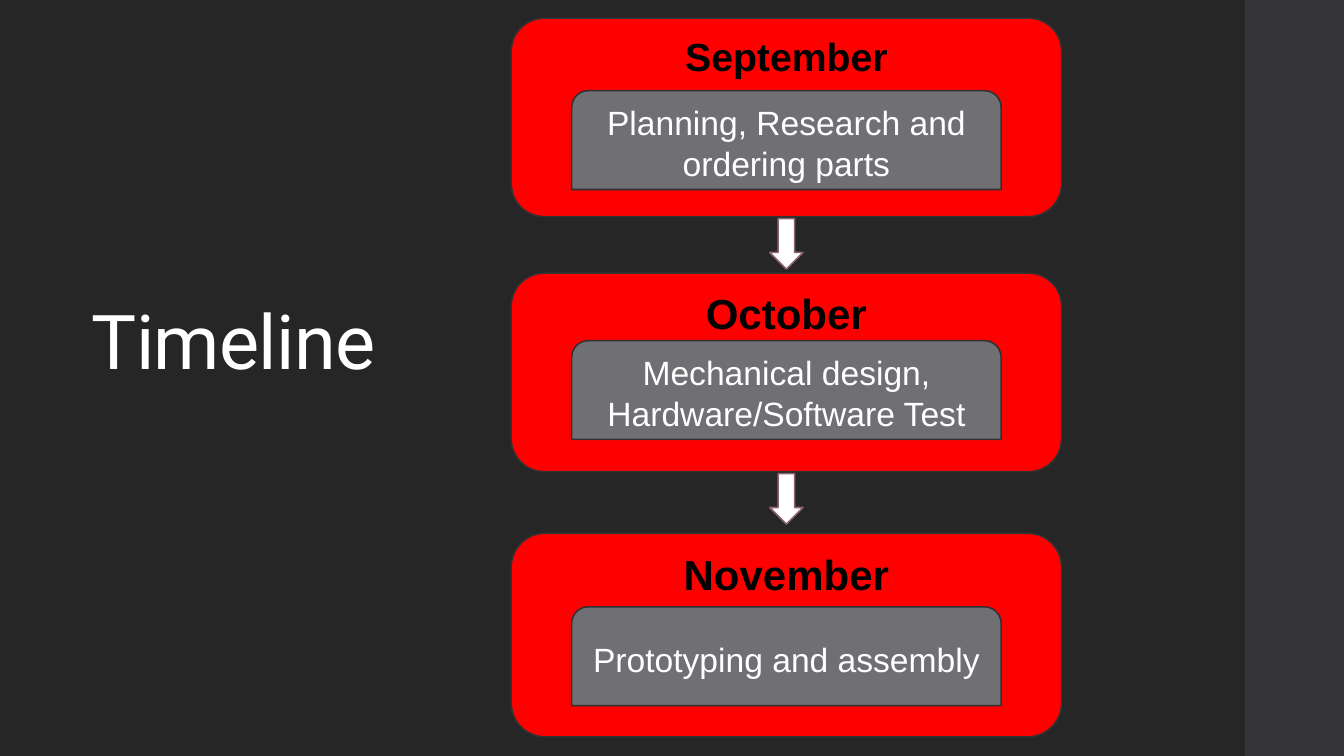
from pptx import Presentation
from pptx import util as u
from pptx.dml.color import RGBColor
from pptx.enum import shapes, text

COLORS = {
    "background": "262626", "band": "353537", "card": "FF0000",
    "task": "6F6F74", "outline": "313133", "arrow": "FFFFFF",
    "arrow_outline": "8D6374", "month": "000000", "light": "FFFFFF",
}
TITLE = "Timeline"
MONTHS = [
    {"name": "September", "size": 28, "top": 0.18, "height": 1.97,
     "task": "Planning, Research and ordering parts", "task_top": 0.9},
    {"name": "October", "size": 30, "top": 2.71, "height": 1.97,
     "task": "Mechanical design, Hardware/Software Test", "task_top": 3.38},
    {"name": "November", "size": 30, "top": 5.29, "height": 2.02,
     "task": "Prototyping and assembly", "task_top": 6.02},
]
CENTER = 7.8
CARD_WIDTH = 5.46
TASK_WIDTH, TASK_HEIGHT = 4.26, 0.98
ARROW_WIDTH, ARROW_HEIGHT, ARROW_GAP = 0.33, 0.5, 0.02
PRESET = shapes.MSO_SHAPE


def color(name):
    return RGBColor.from_string(COLORS[name])


def write(shape, words, size, ink, font="Arial", bold=False,
          anchor=text.MSO_ANCHOR.MIDDLE, line_spacing=None, tracking=None):
    frame = shape.text_frame
    frame.word_wrap = True
    frame.vertical_anchor = anchor
    paragraph = frame.paragraphs[0]
    paragraph.alignment = text.PP_ALIGN.CENTER
    paragraph.line_spacing = line_spacing
    run = paragraph.add_run()
    run.text = words
    run.font.name = font
    run.font.size = u.Pt(size)
    run.font.bold = bold
    run.font.color.rgb = color(ink)
    if tracking is not None:
        run.font._element.set("spc", str(round(tracking * 100)))


def add_block(slide, preset, left, top, width, height, fill, outline=None):
    shape = slide.shapes.add_shape(
        preset, *[u.Inches(length) for length in (left, top, width, height)])
    shape.shadow.inherit = False
    shape.fill.solid()
    shape.fill.fore_color.rgb = color(fill)
    if outline:
        shape.line.color.rgb = color(outline)
        shape.line.width = u.Pt(1.1)
    else:
        shape.line.fill.background()
    return shape


def add_centered(slide, preset, top, width, height, fill, outline):
    return add_block(slide, preset, CENTER - width / 2, top, width, height,
                     fill, outline)


def main():
    presentation = Presentation()
    presentation.slide_width = u.Inches(13.33)
    presentation.slide_height = u.Inches(7.5)
    slide = presentation.slides.add_slide(presentation.slide_layouts[6])
    slide.background.fill.solid()
    slide.background.fill.fore_color.rgb = color("background")

    add_block(slide, PRESET.RECTANGLE, 12.35, 0, 0.98, 7.5, "band")
    title = slide.shapes.add_textbox(
        u.Inches(0.58), u.Inches(2.7), u.Inches(3.47), u.Inches(1.45))
    write(title, TITLE, size=54, ink="light", font="Roboto",
          line_spacing=0.9, tracking=-0.5)

    for month in MONTHS:
        card = add_centered(slide, PRESET.ROUNDED_RECTANGLE, month["top"],
                            CARD_WIDTH, month["height"], "card", "outline")
        write(card, month["name"], size=month["size"], ink="month", bold=True,
              anchor=text.MSO_ANCHOR.TOP)
        task = add_centered(slide, PRESET.ROUND_2_SAME_RECTANGLE,
                            month["task_top"], TASK_WIDTH, TASK_HEIGHT,
                            "task", "outline")
        write(task, month["task"], size=24, ink="light")

    for month in MONTHS[:-1]:
        add_centered(slide, PRESET.DOWN_ARROW,
                     month["top"] + month["height"] + ARROW_GAP,
                     ARROW_WIDTH, ARROW_HEIGHT, "arrow", "arrow_outline")

    presentation.save("out.pptx")


if __name__ == "__main__":
    main()
